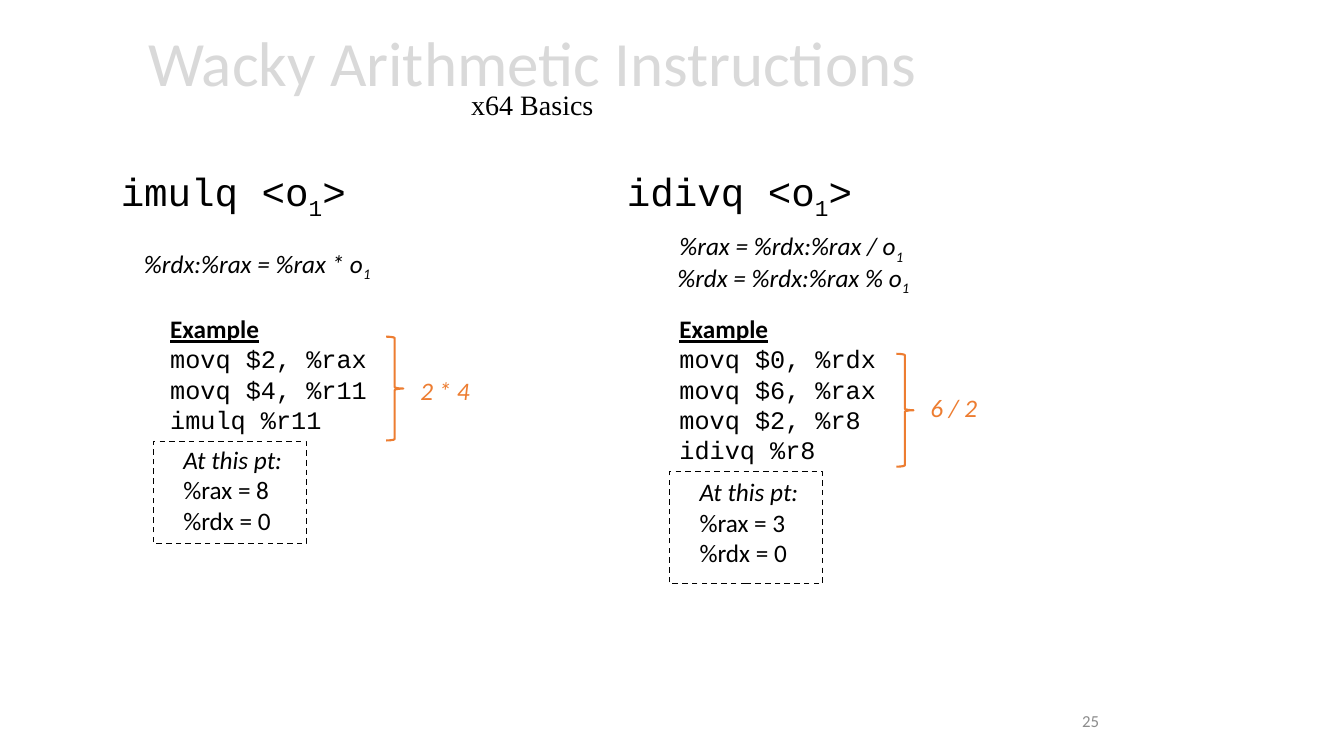
from dataclasses import dataclass

from pptx import Presentation
from pptx.dml.color import RGBColor
from pptx.enum.dml import MSO_LINE
from pptx.enum.shapes import MSO_SHAPE as Shape
from pptx.enum.text import MSO_ANCHOR as Anchor, MSO_AUTO_SIZE as AutoSize, PP_ALIGN as Align
from pptx.util import Inches, Pt


@dataclass(frozen=True)
class Theme:
    sans: str = "Calibri"
    mono: str = "Courier New"
    serif: str = "Times New Roman"
    ink: str = "000000"
    paper: str = "FFFFFF"
    heading: str = "D9D9D9"
    accent: str = "ED7D31"
    muted: str = "8C8C8C"
    title: int = 45
    instruction: int = 28
    subtitle: int = 20
    body: int = 18
    footer: int = 12


THEME = Theme()


class SlideBuilder:
    def __init__(self, presentation, theme):
        self.theme = theme
        self.slide = presentation.slides.add_slide(presentation.slide_layouts[5])

    def run(self, paragraph, text, size=None, font=None, color=None,
            bold=False, italic=False, underline=False, subscript=False):
        run = paragraph.add_run()
        run.text = text
        run.font.size = Pt(size or self.theme.body)
        run.font.name = font or self.theme.sans
        run.font.color.rgb = RGBColor.from_string(color or self.theme.ink)
        run.font.bold = bold
        run.font.italic = italic
        run.font.underline = underline
        if subscript:
            run._r.get_or_add_rPr().set("baseline", "-25000")

    def place(self, shape, box):
        shape.left, shape.top, shape.width, shape.height = map(Inches, box)

    def title(self, heading, subtitle, box):
        shape = self.slide.shapes.title
        self.place(shape, box)
        frame = shape.text_frame
        frame.word_wrap = True
        frame.auto_size = AutoSize.NONE
        frame.vertical_anchor = Anchor.MIDDLE
        paragraph = frame.paragraphs[0]
        paragraph.alignment = Align.CENTER
        paragraph.line_spacing = 0.7
        self.run(paragraph, heading, self.theme.title, color=self.theme.heading)
        paragraph.add_line_break()
        self.run(paragraph, subtitle, self.theme.subtitle, self.theme.serif)

    def text(self, box, lines):
        frame = self.slide.shapes.add_textbox(*map(Inches, box)).text_frame
        frame.word_wrap = False
        frame.auto_size = AutoSize.SHAPE_TO_FIT_TEXT
        for index, runs in enumerate(lines):
            paragraph = frame.add_paragraph() if index else frame.paragraphs[0]
            for text, style in runs:
                self.run(paragraph, text, **style)

    def operand(self, box, before, after="", **style):
        runs = [(before, style), ("1", {**style, "subscript": True})]
        if after:
            runs.append((after, style))
        self.text(box, [runs])

    def code(self, box, instructions):
        heading = [("Example", {"bold": True, "underline": True})]
        listing = [[(line, {"font": self.theme.mono})] for line in instructions]
        self.text(box, [heading] + listing)

    def state(self, frame_box, text_box, registers):
        shape = self.slide.shapes.add_shape(Shape.RECTANGLE, *map(Inches, frame_box))
        shape.shadow.inherit = False
        shape.fill.solid()
        shape.fill.fore_color.rgb = RGBColor.from_string(self.theme.paper)
        shape.line.color.rgb = RGBColor.from_string(self.theme.ink)
        shape.line.width = Pt(1)
        shape.line.dash_style = MSO_LINE.DASH
        self.text(text_box, [[("At this pt:", {"italic": True})]]
                  + [[(register, {})] for register in registers])

    def brace(self, brace_box, label_box, label):
        shape = self.slide.shapes.add_shape(Shape.RIGHT_BRACE, *map(Inches, brace_box))
        shape.shadow.inherit = False
        shape.fill.background()
        shape.line.color.rgb = RGBColor.from_string(self.theme.accent)
        shape.line.width = Pt(1.5)
        self.text(label_box, [[(label, {"color": self.theme.accent, "italic": True})]])

    def page_number(self, number, box):
        frame = self.slide.shapes.add_textbox(*map(Inches, box)).text_frame
        frame.word_wrap = True
        frame.vertical_anchor = Anchor.MIDDLE
        paragraph = frame.paragraphs[0]
        paragraph.alignment = Align.RIGHT
        self.run(paragraph, number, self.theme.footer, color=self.theme.muted)


@dataclass(frozen=True)
class Instruction:
    name: str
    name_left: float
    formulas: list
    code_box: tuple
    code: list
    state_frame: tuple
    state_text: tuple
    registers: list
    brace: tuple
    label_box: tuple
    label: str


INSTRUCTIONS = [
    Instruction(
        "imulq", 1.1,
        [((1.33, 2.41, 2.5, 0.4), "%rdx:%rax = %rax * o")],
        (1.59, 3.06, 2.16, 1.31),
        ["movq $2, %rax", "movq $4, %r11", "imulq %r11"],
        (1.52, 4.38, 1.52, 1.01), (1.72, 4.36, 1.2, 1.01),
        ["%rax = 8", "%rdx = 0"],
        (3.83, 3.34, 0.17, 1.03), (4.07, 3.67, 0.7, 0.4), "2 * 4"),
    Instruction(
        "idivq", 6.12,
        [((6.64, 2.24, 2.48, 0.4), "%rax = %rdx:%rax / o"),
         ((6.62, 2.55, 2.56, 0.4), "%rdx = %rdx:%rax % o")],
        (6.64, 3.06, 2.16, 1.62),
        ["movq $0, %rdx", "movq $6, %rax", "movq $2, %r8", "idivq %r8"],
        (6.64, 4.68, 1.52, 1.11), (6.84, 4.68, 1.2, 1.01),
        ["%rax = 3", "%rdx = 0"],
        (8.89, 3.51, 0.17, 1.12), (9.13, 3.84, 0.67, 0.4), "6 / 2"),
]


def main():
    presentation = Presentation()
    presentation.slide_width = Inches(13.33)
    presentation.slide_height = Inches(7.5)
    builder = SlideBuilder(presentation, THEME)
    builder.title("Wacky Arithmetic Instructions", "x64 Basics", (0.28, 0.09, 10, 1.45))
    for item in INSTRUCTIONS:
        builder.operand((item.name_left, 1.61, 2.47, 0.57), f"{item.name} <o", ">",
                        size=THEME.instruction, font=THEME.mono)
        for box, formula in item.formulas:
            builder.operand(box, formula, italic=True)
        builder.code(item.code_box, item.code)
        builder.state(item.state_frame, item.state_text, item.registers)
        builder.brace(item.brace, item.label_box, item.label)
    builder.page_number("25", (8, 6.95, 3, 0.4))
    presentation.save("out.pptx")


if __name__ == "__main__":
    main()
